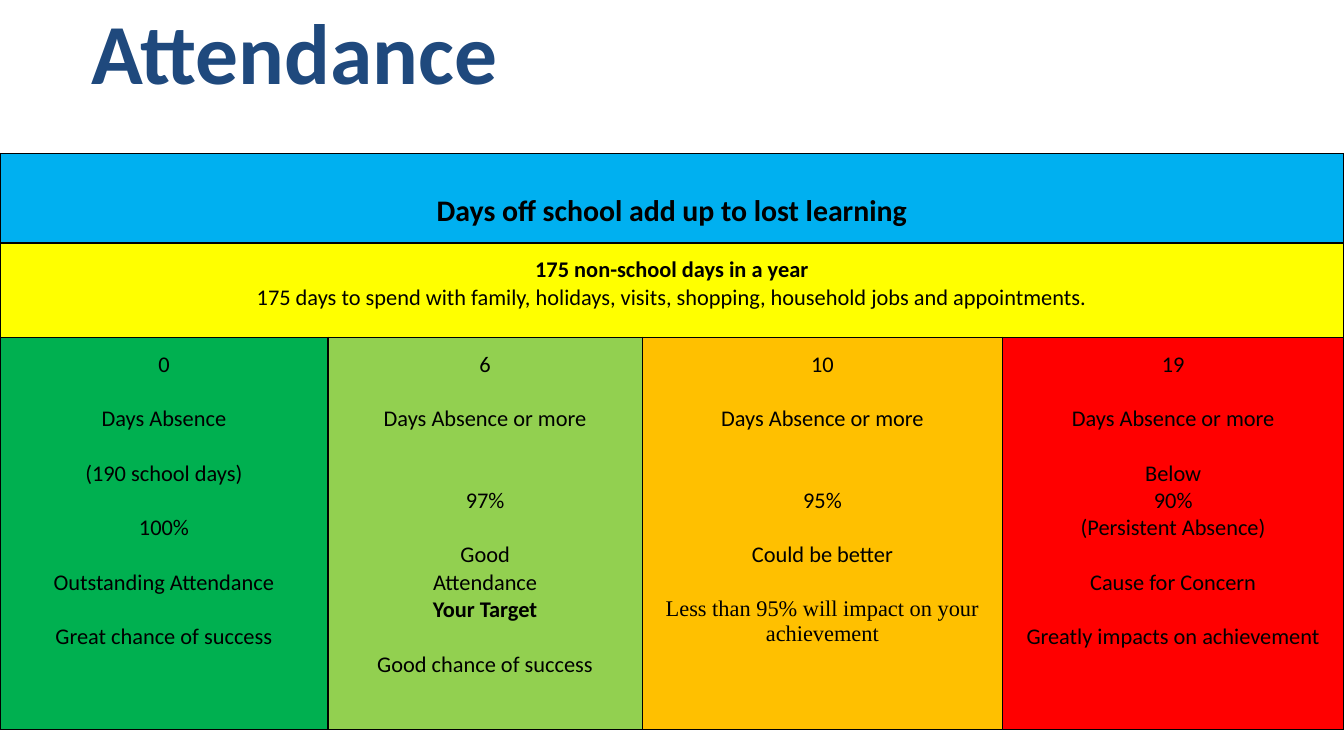
from dataclasses import dataclass

from lxml.etree import SubElement
from pptx import Presentation
from pptx.dml.color import RGBColor
from pptx.enum.text import MSO_ANCHOR, PP_ALIGN
from pptx.oxml.ns import qn
from pptx.util import Inches, Pt

COLORS = {
    "title": "1F497D",
    "ink": "000000",
    "blue": "00B0F0",
    "yellow": "FFFF00",
    "green": "00B050",
    "lime": "92D050",
    "amber": "FFC000",
    "red": "FF0000",
}
LINE = 14.6
COL_WIDTHS = [2.44, 2.34, 2.68, 2.54]
ROW_HEIGHTS = [0.67, 0.7, 2.92]


@dataclass
class Line:
    text: str
    gap: int = 0
    bold: bool = False
    size: float = 12
    font: str = "Calibri"


@dataclass
class Block:
    row: int
    col: int
    fill: str
    lines: list[Line]
    span: int = 1
    anchor: MSO_ANCHOR = MSO_ANCHOR.TOP


BLOCKS = [
    Block(0, 0, "blue", [
        Line("Days off school add up to lost learning", bold=True, size=16),
    ], span=4, anchor=MSO_ANCHOR.BOTTOM),
    Block(1, 0, "yellow", [
        Line("175 non-school days in a year", bold=True),
        Line("175 days to spend with family, holidays, visits, shopping, "
             "household jobs and appointments."),
    ], span=4),
    Block(2, 0, "green", [
        Line("0"),
        Line("Days Absence", 1),
        Line("(190 school days)", 1),
        Line("100%", 1),
        Line("Outstanding Attendance", 1),
        Line("Great chance of success", 1),
    ]),
    Block(2, 1, "lime", [
        Line("6"),
        Line("Days Absence or more", 1),
        Line("97%", 2),
        Line("Good", 1),
        Line("Attendance"),
        Line("Your Target", bold=True),
        Line("Good chance of success", 1),
    ]),
    Block(2, 2, "amber", [
        Line("10"),
        Line("Days Absence or more", 1),
        Line("95%", 2),
        Line("Could be better", 1),
        Line("Less than 95% will impact on your achievement", 1,
             font="Times New Roman"),
    ]),
    Block(2, 3, "red", [
        Line("19"),
        Line("Days Absence or more", 1),
        Line("Below", 1),
        Line("90%"),
        Line("(Persistent Absence)"),
        Line("Cause for Concern", 1),
        Line("Greatly impacts on achievement", 1),
    ]),
]


def add_run(p, text: str, font: str, size: float, color: str, bold: bool) -> None:
    r = p.add_run()
    r.text = text
    r.font.name = font
    r.font.size = Pt(size)
    r.font.bold = bold
    r.font.color.rgb = RGBColor.from_string(COLORS[color])


def set_borders(cell, row: int) -> None:
    tc_pr = cell._tc.get_or_add_tcPr()
    for side in "LRTB":
        width = 0.5 if side == "T" and row == 0 else 1
        ln = SubElement(tc_pr, qn(f"a:ln{side}"), w=str(Pt(width)))
        fill = SubElement(ln, qn("a:solidFill"))
        SubElement(fill, qn("a:srgbClr"), val=COLORS["ink"])


def draw_block(table, block: Block) -> None:
    cell = table.cell(block.row, block.col)
    last = block.col + block.span - 1
    if block.span > 1:
        cell.merge(table.cell(block.row, last))
    for col in range(block.col, last + 1):
        part = table.cell(block.row, col)
        set_borders(part, block.row)
        part.fill.solid()
        part.fill.fore_color.rgb = RGBColor.from_string(COLORS[block.fill])
    cell.margin_left = cell.margin_right = Inches(0.07)
    cell.margin_top = cell.margin_bottom = Inches(0.1)
    cell.vertical_anchor = block.anchor
    tf = cell.text_frame
    for i, line in enumerate(block.lines):
        p = tf.add_paragraph() if i else tf.paragraphs[0]
        p.alignment = PP_ALIGN.CENTER
        if line.gap:
            p.space_before = Pt(line.gap * LINE)
        add_run(p, line.text, line.font, line.size, "ink", line.bold)


def draw_title(s, text: str) -> None:
    sp = s.shapes.title
    sp.left, sp.top = Inches(0.08), Inches(-0.11)
    sp.width, sp.height = Inches(9.32), Inches(1)
    tf = sp.text_frame
    tf.vertical_anchor = MSO_ANCHOR.TOP
    tf.margin_left = tf.margin_right = Inches(0.1)
    tf.margin_top = tf.margin_bottom = Inches(0.1)
    p = tf.paragraphs[0]
    p.alignment = PP_ALIGN.LEFT
    p_pr = p._p.get_or_add_pPr()
    p_pr.set("marL", str(Inches(0.5)))
    p_pr.set("indent", "0")
    add_run(p, text, "Calibri", 45.8, "title", True)


def draw_table(s) -> None:
    table = s.shapes.add_table(
        len(ROW_HEIGHTS), len(COL_WIDTHS), Inches(0), Inches(1.14),
        Inches(sum(COL_WIDTHS)), Inches(sum(ROW_HEIGHTS))).table
    table.first_row = table.horz_banding = False
    for column, width in zip(table.columns, COL_WIDTHS):
        column.width = Inches(width)
    for row, height in zip(table.rows, ROW_HEIGHTS):
        row.height = Inches(height)
    for block in BLOCKS:
        draw_block(table, block)


def main() -> None:
    prs = Presentation()
    prs.slide_width = Inches(10)
    prs.slide_height = prs.slide_width * 9 // 16
    s = prs.slides.add_slide(prs.slide_layouts[5])
    draw_title(s, "Attendance")
    draw_table(s)
    prs.save("out.pptx")


if __name__ == "__main__":
    main()
